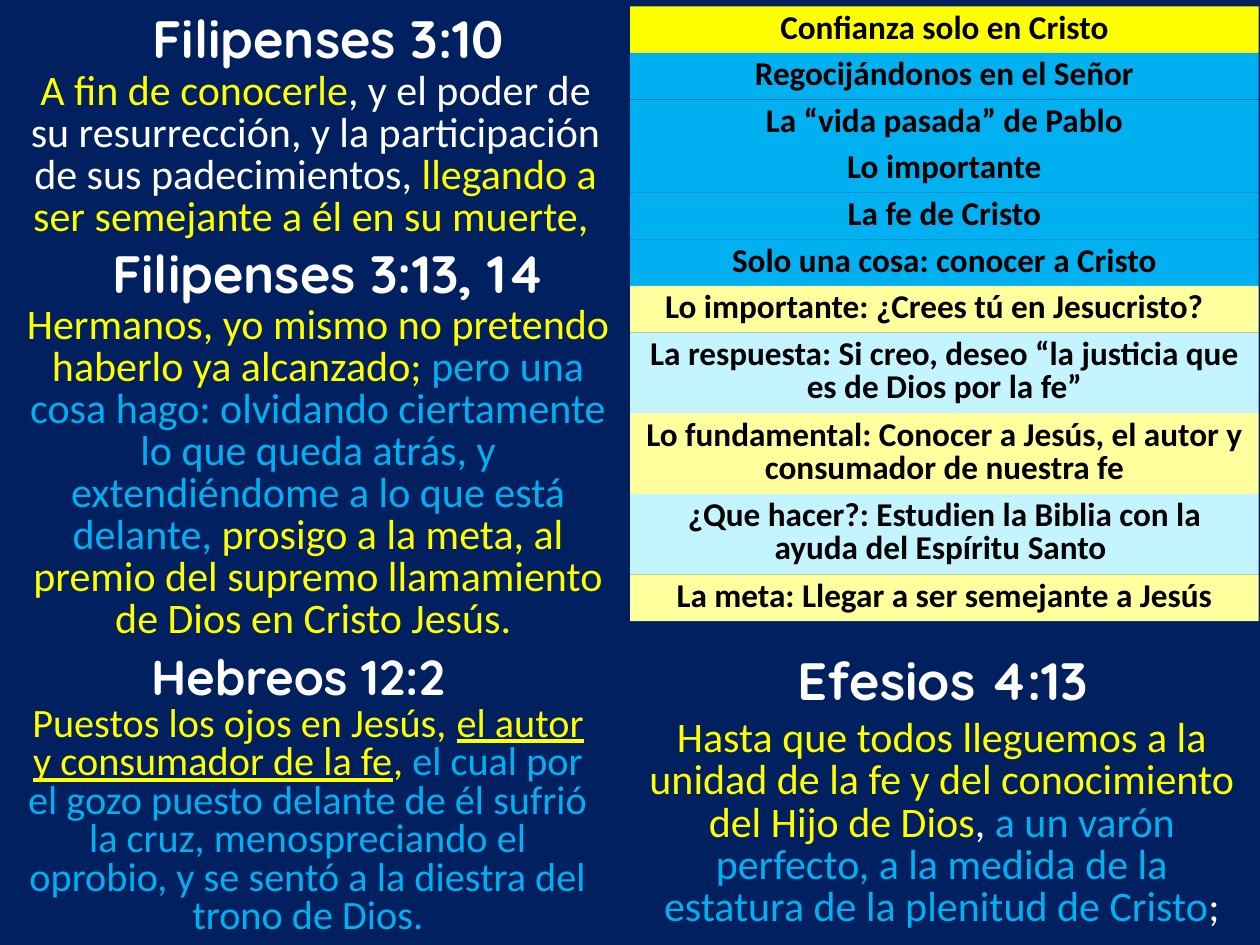
from pptx import Presentation
from pptx.dml.color import RGBColor
from pptx.enum.shapes import MSO_SHAPE
from pptx.enum.text import MSO_ANCHOR, MSO_AUTO_SIZE, PP_ALIGN
from pptx.util import Inches, Pt

NAVY = RGBColor(0x00, 0x20, 0x60)
WHITE = RGBColor(0xFF, 0xFF, 0xFF)
BLACK = RGBColor(0x00, 0x00, 0x00)
YELLOW = RGBColor(0xFF, 0xFF, 0x00)
BLUE = RGBColor(0x00, 0xB0, 0xF0)
CREAM = RGBColor(0xFF, 0xFF, 0x9E)
PALE_BLUE = RGBColor(0xC3, 0xF4, 0xFF)

# Outline bands, top to bottom: text, fill, lines of text, extra right inset
OUTLINE = [
    ("Confianza solo en Cristo", YELLOW, 1, 0),
    ("Regocijándonos en el Señor", BLUE, 1, 0),
    ("La “vida pasada” de Pablo", BLUE, 1, 0),
    ("Lo importante", BLUE, 1, 0),
    ("La fe de Cristo", BLUE, 1, 0),
    ("Solo una cosa: conocer a Cristo", BLUE, 1, 0),
    ("Lo importante: ¿Crees tú en Jesucristo?", CREAM, 1, 0.16),
    ("La respuesta: Si creo, deseo “la justicia que es de Dios por la fe”",
     PALE_BLUE, 2, 0),
    ("Lo fundamental: Conocer a Jesús, el autor y consumador de nuestra fe",
     CREAM, 2, 0),
    ("¿Que hacer?: Estudien la Biblia con la ayuda del Espíritu Santo ",
     PALE_BLUE, 2, 0),
    ("La meta: Llegar a ser semejante a Jesús", CREAM, 1, 0),
]
OUTLINE_LEFT, OUTLINE_TOP, OUTLINE_WIDTH = 5.0, 0.05, 4.99
BAND_HEIGHT = {1: 0.37, 2: 0.64}

# Passages: heading, its size and box; verse runs (text, colour, underline),
# size, line spacing and box (left, top, width, height)
PASSAGES = [
    ("Filipenses 3:10", 30, (0.28, 0, 4.65, 1.11),
     [("A fin de conocerle", YELLOW, False),
      (", y el poder de su resurrección, y la participación de sus "
       "padecimientos, ", WHITE, False),
      ("llegando a ser semejante a él en su muerte, ", YELLOW, False)],
     24, 24, (0.04, 0.52, 4.93, 1.45)),
    ("Filipenses 3:13, 14", 30, (0.28, 1.86, 4.65, 0.61),
     [("Hermanos, yo mismo no pretendo haberlo ya alcanzado; ", YELLOW, False),
      ("pero una cosa hago: olvidando ciertamente lo que queda atrás, y "
       "extendiéndome a lo que está delante, ", BLUE, False),
      ("prosigo a la meta, al premio del supremo llamamiento de Dios en "
       "Cristo Jesús. ", YELLOW, False)],
     24, 24, (0.06, 2.38, 4.93, 3.13)),
    ("Hebreos 12:2", 28, (0.04, 5.08, 4.65, 0.57),
     [("Puestos los ojos en Jesús, ", YELLOW, False),
      ("el autor y consumador de la fe", YELLOW, True),
      (", ", YELLOW, False),
      ("el cual por el gozo puesto delante de él sufrió la cruz, "
       "menospreciando el oprobio, y se sentó a la diestra del trono de Dios.",
       BLUE, False)],
     23, 22, (0.12, 5.56, 4.65, 1.96)),
    ("Efesios 4:13", 30, (5.16, 5.09, 4.65, 0.61),
     [("Hasta que todos lleguemos a la unidad de la fe y del conocimiento "
       "del Hijo de Dios", YELLOW, False),
      (", ", WHITE, False),
      ("a un varón perfecto, a la medida de la estatura de la plenitud de "
       "Cristo", BLUE, False),
      (";", WHITE, False)],
     24, 24, (5.01, 5.66, 4.93, 1.79)),
]


def add_text(slide, runs, box, size, font="Calibri", bold=False,
             spacing=None, fill=None, extra_right=0):
    """Place centred runs in a text box, or in a filled band if fill is set."""
    area = [Inches(length) for length in box]
    if fill is None:
        holder = slide.shapes.add_textbox(*area)
    else:
        holder = slide.shapes.add_shape(MSO_SHAPE.RECTANGLE, *area)
        holder.shadow.inherit = False
        holder.fill.solid()
        holder.fill.fore_color.rgb = fill
        holder.line.fill.background()
    frame = holder.text_frame
    frame.word_wrap = True
    frame.auto_size = MSO_AUTO_SIZE.SHAPE_TO_FIT_TEXT
    frame.vertical_anchor = MSO_ANCHOR.TOP
    frame.margin_right = Inches(0.1 + extra_right)
    paragraph = frame.paragraphs[0]
    paragraph.alignment = PP_ALIGN.CENTER
    if spacing:
        paragraph.line_spacing = Pt(spacing)
    for text, color, underline in runs:
        run = paragraph.add_run()
        run.text = text
        run.font.name = font
        run.font.size = Pt(size)
        run.font.bold = bold
        run.font.underline = underline
        run.font.color.rgb = color


def main():
    deck = Presentation()
    deck.slide_width, deck.slide_height = Inches(10), Inches(7.5)
    slide = deck.slides.add_slide(deck.slide_layouts[6])
    slide.background.fill.solid()
    slide.background.fill.fore_color.rgb = NAVY

    # Outline bands stacked one under another
    top = OUTLINE_TOP
    for text, fill, lines, extra_right in OUTLINE:
        height = BAND_HEIGHT[lines]
        add_text(slide, [(text, BLACK, False)],
                 (OUTLINE_LEFT, top, OUTLINE_WIDTH, height), 19, bold=True,
                 spacing=19, fill=fill, extra_right=extra_right)
        top += height

    # Bible passages
    for heading, heading_size, heading_box, verse, size, spacing, box in PASSAGES:
        add_text(slide, [(heading, WHITE, False)], heading_box, heading_size,
                 font="Quicksand", bold=True)
        add_text(slide, verse, box, size, spacing=spacing)

    deck.save("out.pptx")


if __name__ == "__main__":
    main()
